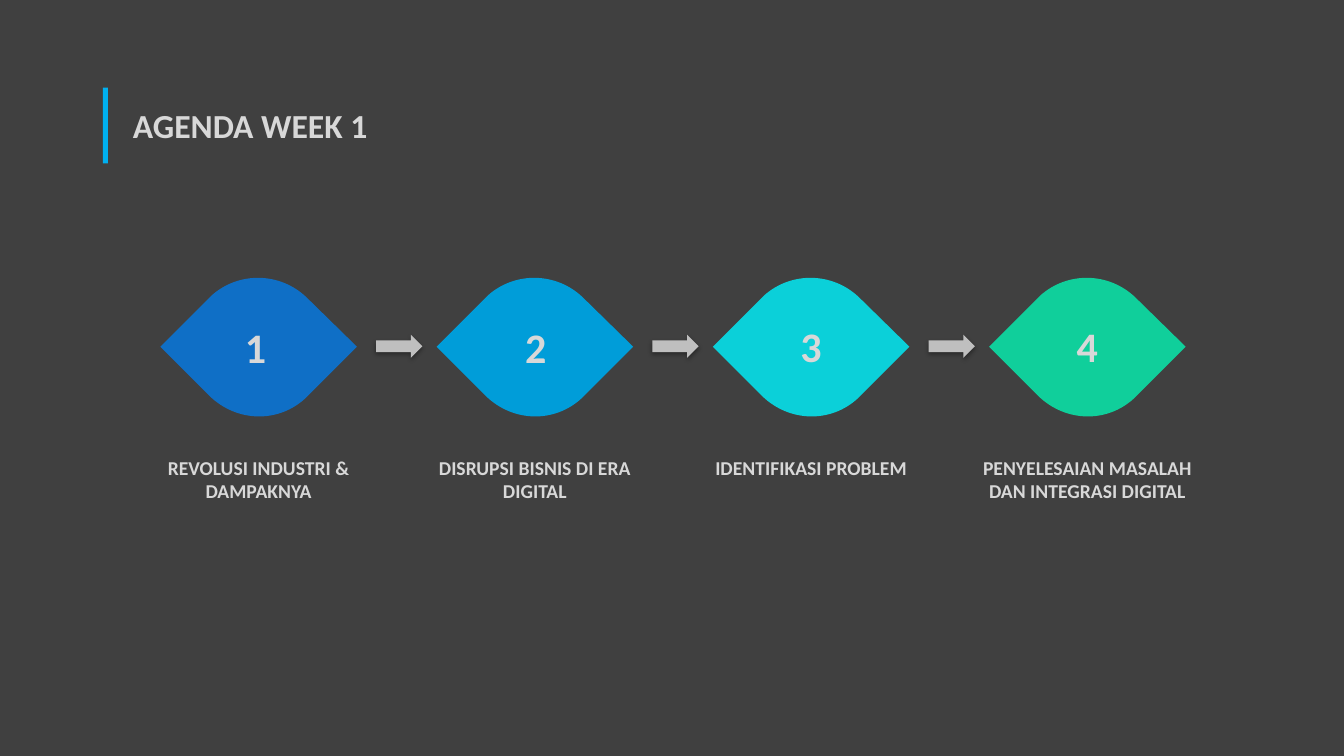
from lxml.etree import SubElement
from pptx import Presentation
from pptx.dml.color import RGBColor
from pptx.enum.shapes import MSO_SHAPE
from pptx.enum.text import PP_ALIGN
from pptx.oxml.ns import qn
from pptx.util import Inches, Pt

TITLE = "AGENDA WEEK 1"
STEPS = [
    {"label": "REVOLUSI INDUSTRI & DAMPAKNYA", "color": "0F6FC6", "number_at": (2.33, 3.14)},
    {"label": "DISRUPSI BISNIS DI ERA DIGITAL", "color": "009DD9", "number_at": (5.11, 3.14)},
    {"label": "IDENTIFIKASI PROBLEM", "color": "0BD0D9", "number_at": (7.84, 3.13)},
    {"label": "PENYELESAIAN MASALAH DAN INTEGRASI DIGITAL", "color": "10CF9B", "number_at": (10.58, 3.13)},
]
THEME = {
    "font": "Calibri", "background": "404040", "text": "D8D8D8",
    "accent": "00B0F0", "arrow": "BFBFBF", "shadow": "000000",
    "title": 24, "number": 30, "label": 14,
}
LEAF = [
    (0, 0.75), (0.51, 0.24), (0.78, 0), (1.19, 0.01), (1.45, 0.26),
    (1.95, 0.75), (1.44, 1.26), (1.17, 1.51), (0.76, 1.5), (0.49, 1.24),
]
CURVE_STARTS = (1, 6)
FIRST_LEFT, PITCH, LEAF_TOP = 1.59, 2.74, 2.69


def style_shape(sp, color):
    sp.shadow.inherit = False
    sp.fill.solid()
    sp.fill.fore_color.rgb = RGBColor.from_string(color)
    sp.line.fill.background()


def add_block(s, kind, box, color):
    sp = s.shapes.add_shape(kind, *map(Inches, box))
    style_shape(sp, color)
    return sp


def add_text(s, box, text, size, align=PP_ALIGN.LEFT):
    tf = s.shapes.add_textbox(*map(Inches, box)).text_frame
    tf.word_wrap = True
    p = tf.paragraphs[0]
    p.alignment = align
    r = p.add_run()
    r.text = text
    for name, value in {"name": THEME["font"], "size": Pt(size), "bold": True}.items():
        setattr(r.font, name, value)
    r.font.color.rgb = RGBColor.from_string(THEME["text"])


def add_leaf(s, left, color):
    points = [(Inches(left + x), Inches(LEAF_TOP + y)) for x, y in LEAF]
    builder = s.shapes.build_freeform(*points[0])
    builder.add_line_segments(points[1:], close=True)
    sp = builder.convert_to_shape()
    style_shape(sp, color)
    segments = sp.element.xpath(".//a:lnTo")
    for start in CURVE_STARTS:
        first, *rest = segments[start:start + 3]
        first.tag = qn("a:cubicBezTo")
        for segment in rest:
            first.append(segment[0])
            segment.getparent().remove(segment)


def add_arrow(s, left):
    sp = add_block(s, MSO_SHAPE.RIGHT_ARROW, (left, 3.32, 0.46, 0.23), THEME["arrow"])
    effects = sp.element.spPr.find(qn("a:effectLst"))
    shadow = SubElement(effects, qn("a:outerShdw"), blurRad=str(Pt(3.1)),
                        dist=str(Pt(1.8)), dir="5400000", rotWithShape="0")
    color = SubElement(shadow, qn("a:srgbClr"), val=THEME["shadow"])
    SubElement(color, qn("a:alpha"), val="35000")


def main():
    prs = Presentation()
    prs.slide_width, prs.slide_height = Inches(13.33), Inches(7.5)
    s = prs.slides.add_slide(prs.slide_layouts[6])
    s.background.fill.solid()
    s.background.fill.fore_color.rgb = RGBColor.from_string(THEME["background"])

    add_block(s, MSO_SHAPE.RECTANGLE, (1.02, 0.87, 0.05, 0.75), THEME["accent"])
    add_text(s, (1.22, 0.99, 4.08, 0.5), TITLE, THEME["title"])

    for i, step in enumerate(STEPS):
        left = FIRST_LEFT + i * PITCH
        add_leaf(s, left, step["color"])
        add_text(s, (*step["number_at"], 0.46, 0.61), str(i + 1), THEME["number"])
        add_text(s, (left - 0.18, 4.47, 2.31, 0.57), step["label"], THEME["label"], PP_ALIGN.CENTER)
        if i < len(STEPS) - 1:
            add_arrow(s, left + 2.14)

    prs.save("out.pptx")


if __name__ == "__main__":
    main()
